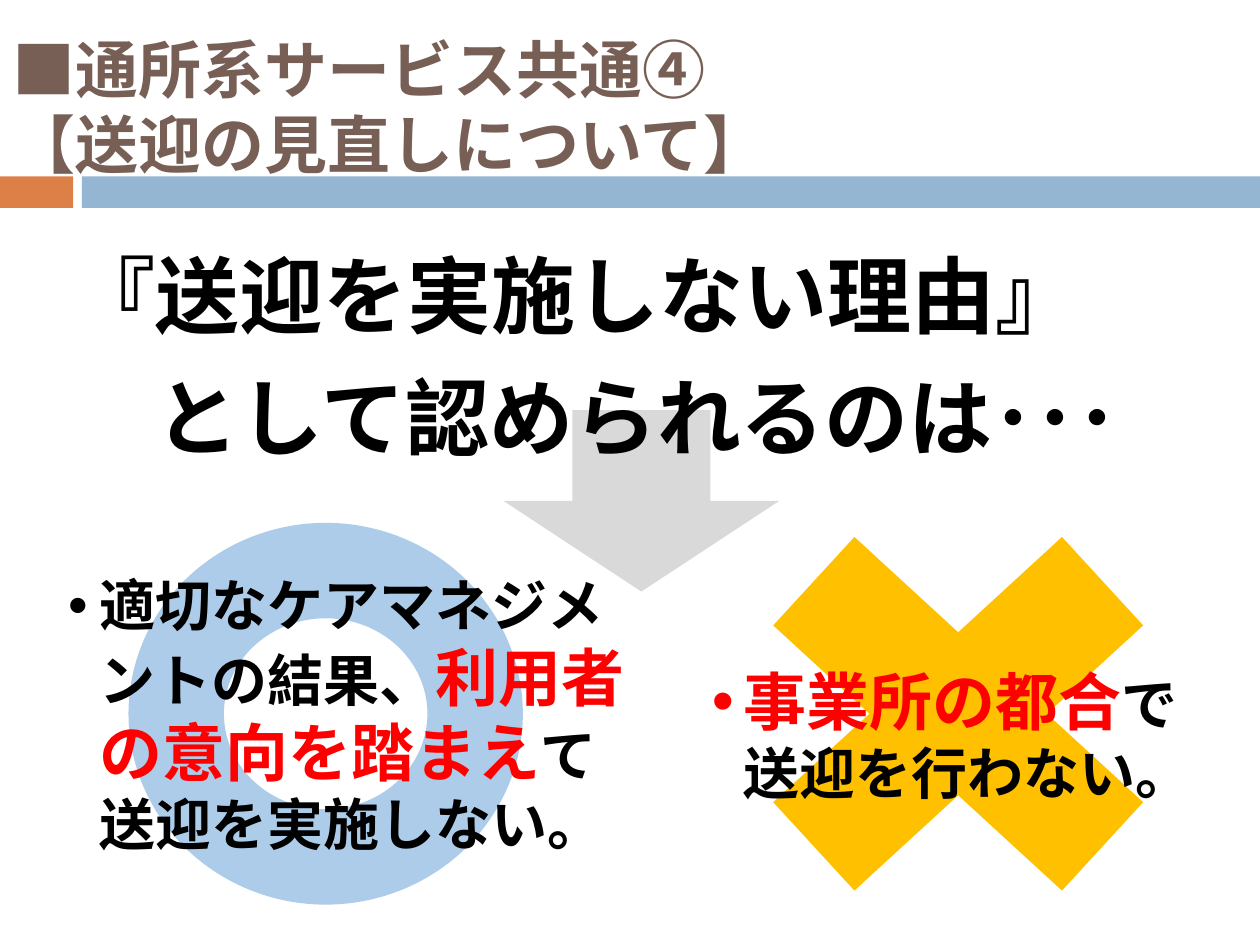
from pptx import Presentation
from pptx.dml.color import RGBColor
from pptx.enum.shapes import MSO_SHAPE
from pptx.enum.text import MSO_ANCHOR, MSO_AUTO_SIZE, PP_ALIGN
from pptx.oxml.ns import qn
from pptx.util import Inches, Pt
from lxml.etree import SubElement

BLACK = RGBColor(0, 0, 0)
RED = RGBColor(0xFF, 0, 0)
BROWN = RGBColor(0x77, 0x5F, 0x55)
ORANGE = RGBColor(0xDD, 0x80, 0x47)
BLUE = RGBColor(0x94, 0xB6, 0xD2)
RING = RGBColor(0x5B, 0x9B, 0xD5)
GOLD = RGBColor(0xFF, 0xC0, 0)
GREY = RGBColor(0xD9, 0xD9, 0xD9)
SPARTAN, NOTO = "League Spartan", "Noto Sans CJK JP"

# Content: each paragraph is a list of (text, size, colour, font)
TITLE = [
    [("■通所系サービス共通④", 36, BROWN, SPARTAN)],
    [("【送迎の見直しについて】", 36, BROWN, NOTO)],
]
HEAD = [
    [("『送迎を実施しない理由』", 48, BLACK, SPARTAN)],
    [("　として認められるのは･･･", 48, BLACK, SPARTAN)],
]
VALID = [[
    ("適切なケアマネジメントの結果、", 32, BLACK, SPARTAN),
    ("利用者の意向を踏まえ", 36, RED, SPARTAN),
    ("て送迎を実施しない。", 32, BLACK, SPARTAN),
]]
INVALID = [[
    ("事業所の都合", 36, RED, SPARTAN),
    ("で送迎を行わない。", 32, BLACK, SPARTAN),
]]

# Shapes from back to front: kind, box, fill, turn
SHAPES = [
    (MSO_SHAPE.RECTANGLE, (0, 1.4, 0.58, 0.25), ORANGE, 0),
    (MSO_SHAPE.RECTANGLE, (0.65, 1.4, 9.35, 0.25), BLUE, 0),
    (MSO_SHAPE.MATH_MULTIPLY, (5.4, 3.64, 4.41, 4.05), GOLD, 0),
    (MSO_SHAPE.RIGHT_ARROW, (4.37, 2.88, 1.44, 2.19), GREY, 90),
    (MSO_SHAPE.DONUT, (1.02, 4.15, 3.13, 3.03), RING, 0),
]


def draw(slide, kind, box, fill, turn):
    shape = slide.shapes.add_shape(kind, *map(Inches, box))
    shape.shadow.inherit = False
    shape.fill.solid()
    shape.fill.fore_color.rgb = fill
    shape.line.fill.background()
    shape.rotation = turn
    return shape


def write(shape, box, paras, gap=0, bullet=False):
    shape.left, shape.top, shape.width, shape.height = map(Inches, box)
    frame = shape.text_frame
    frame.word_wrap = True
    frame.auto_size = MSO_AUTO_SIZE.NONE
    frame.vertical_anchor = MSO_ANCHOR.MIDDLE
    for i, parts in enumerate(paras):
        para = frame.add_paragraph() if i else frame.paragraphs[0]
        para.alignment = PP_ALIGN.LEFT
        para.line_spacing = 1.0
        para.space_before = Pt(gap)
        props = para._p.get_or_add_pPr()
        if bullet:
            props.set("marL", str(Inches(0.25)))
            props.set("indent", str(-Inches(0.25)))
            SubElement(props, qn("a:buFont"), typeface="Arial")
            SubElement(props, qn("a:buChar"), char="•")
        for text, size, color, face in parts:
            run = para.add_run()
            run.text = text
            font = run.font
            font.size, font.bold, font.name = Pt(size), True, face
            font.color.rgb = color
            SubElement(font._element, qn("a:ea"), typeface=face)


deck = Presentation()
deck.slide_width, deck.slide_height = Inches(10), Inches(7.5)
slide = deck.slides.add_slide(deck.slide_layouts[3])
title, left, right = list(slide.placeholders)[:3]

# Bars and symbols, kept behind the text
drawn = [draw(slide, *item) for item in SHAPES]
ring = drawn[-1]
tint = ring.fill._xPr.find(qn("a:solidFill"))[0]
SubElement(tint, qn("a:alpha"), val="50000")
for holder in (title, left, right):
    slide.shapes._spTree.append(holder._element)

# Title, the two lists and the heading
write(title, (0, 0.04, 10, 1.6), TITLE)
write(left, (0.44, 4.47, 4.71, 2.39), VALID, 12, True)
write(right, (5.55, 5.2, 4.12, 1.25), INVALID, 12, True)
head = slide.shapes.add_textbox(0, 0, 0, 0)
write(head, (0.47, 1.88, 8.62, 1.88), HEAD, 12)

deck.save("out.pptx")
